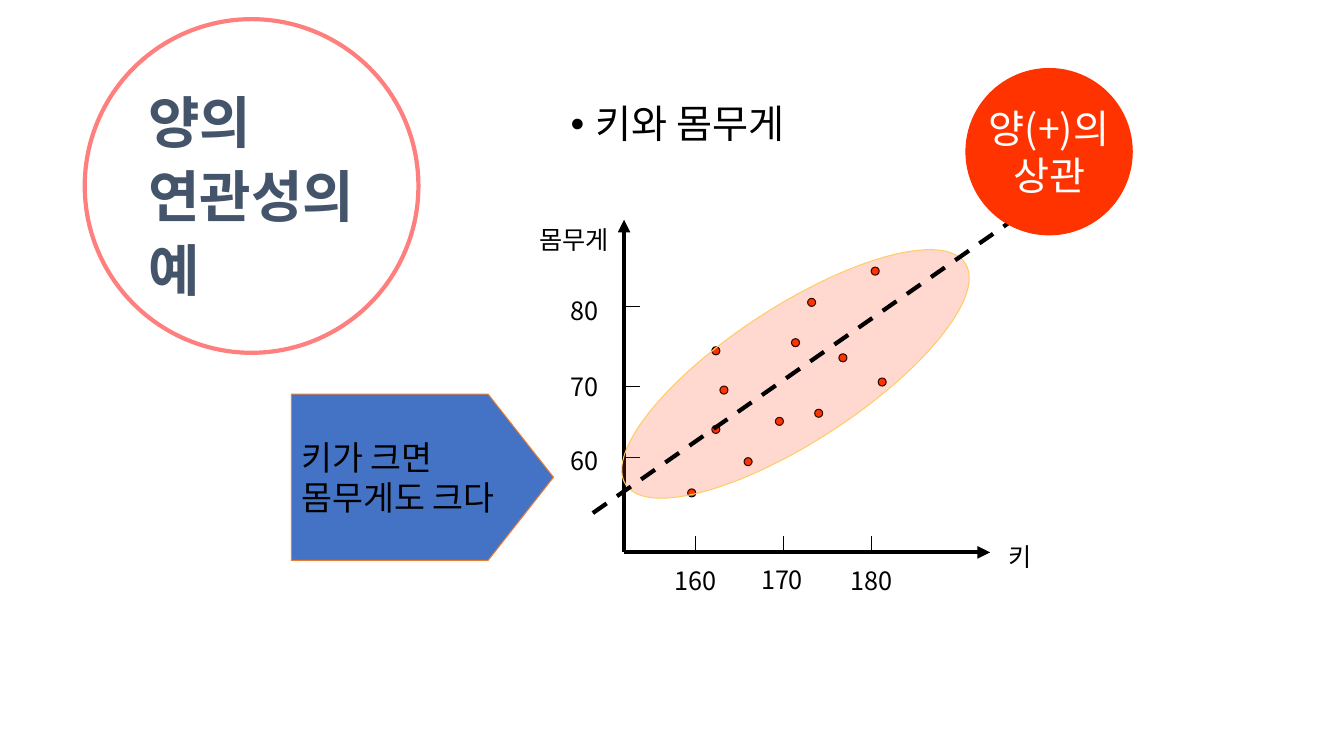
from pptx import Presentation
from pptx.dml.color import RGBColor
from pptx.enum.dml import MSO_LINE
from pptx.enum.shapes import MSO_CONNECTOR, MSO_SHAPE as Form
from pptx.enum.text import MSO_ANCHOR as Anchor, MSO_AUTO_SIZE as Fit, PP_ALIGN as Align
from pptx.util import Pt
from lxml.etree import SubElement
from pptx.oxml.ns import qn

PX = 9144  # 100 px to the inch
BLACK = RGBColor(0x00, 0x00, 0x00)
WHITE = RGBColor(0xFF, 0xFF, 0xFF)
RED = RGBColor(0xFF, 0x00, 0x00)
CORAL = RGBColor(0xFF, 0x33, 0x00)
GOLD = RGBColor(0xFF, 0xCC, 0x66)
BLUE = RGBColor(0x44, 0x72, 0xC4)
ORANGE = RGBColor(0xED, 0x7D, 0x31)
SLATE = RGBColor(0x44, 0x54, 0x6A)
NOTO = "Noto Sans CJK KR"

deck = Presentation()
deck.slide_width, deck.slide_height = 1333 * PX, 750 * PX
slide = deck.slides.add_slide(deck.slide_layouts[1])
shapes = slide.shapes


def draw(form, box, fill, edge, width=0.75):
    item = shapes.add_shape(form, *[n * PX for n in box])
    item.shadow.inherit = False
    if fill is None:
        item.fill.background()
    else:
        item.fill.solid()
        item.fill.fore_color.rgb = fill
    item.line.color.rgb = edge
    item.line.width = Pt(width)
    return item


def rule(x1, y1, x2, y2, width=0.75):
    item = shapes.add_connector(MSO_CONNECTOR.STRAIGHT, x1 * PX, y1 * PX, x2 * PX, y2 * PX)
    item.line.color.rgb = BLACK
    item.line.width = Pt(width)
    SubElement(item._element.spPr, qn("a:effectLst"))
    return item


# Title ring, half clear
ring = draw(Form.OVAL, (84, 19, 331, 331), None, RED, 3)
tint = ring.line._ln.find(".//" + qn("a:srgbClr"))
SubElement(tint, qn("a:alpha"), val="50000")

# Axes with arrowheads
LEFT, BASE = 619, 548
for end in ((LEFT, 218), (982, BASE)):
    axis = rule(LEFT, BASE, *end, 3)
    SubElement(axis.line._ln, qn("a:tailEnd"), type="triangle")

# Ticks and their labels
labels = [("키", 990, 532, 45), ("몸무게", 525, 218, 96)]
for x, text, left, top in ((690, "160", 659, 556), (777, "170", 745, 555), (864, "180", 834, 556)):
    rule(x, BASE, x, BASE - 16)
    labels.append((text, left, top, 66))
for y, text, top in ((454, "60", 437), (383, "70", 363), (304, "80", 288)):
    rule(LEFT, y, LEFT + 16, y)
    labels.append((text, 556, top, 50))

texts = []  # frame, words, size, colour, font
for text, left, top, width in labels:
    frame = shapes.add_textbox(left * PX, top * PX, width * PX, 40 * PX).text_frame
    frame.word_wrap = False
    frame.auto_size = Fit.SHAPE_TO_FIT_TEXT
    texts.append((frame, text, 18, BLACK, NOTO))

# Data points
for x, y in ((769, 414), (864, 265), (785, 336), (832, 351), (808, 406), (706, 422),
             (682, 485), (714, 383), (738, 454), (801, 296), (871, 375), (706, 344)):
    draw(Form.OVAL, (x, y, 8, 8), CORAL, BLACK)

# Tilted cloud and trend line
cloud = draw(Form.OVAL, (588, 304, 402, 134), CORAL, GOLD)
cloud.rotation = 326.9
tint = cloud._element.spPr.find(qn("a:solidFill")).find(qn("a:srgbClr"))
SubElement(tint, qn("a:alpha"), val="19000")
trend = rule(588, 509, 1005, 218, 3)
trend.line.dash_style = MSO_LINE.DASH

# Callout and badge
note = draw(Form.PENTAGON, (289, 391, 260, 165), BLUE, ORANGE)
note.adjustments[0] = 0.393
badge = draw(Form.OVAL, (958, 68, 165, 165), CORAL, CORAL)
for item in (note, badge):
    item.text_frame.word_wrap = False
    item.text_frame.vertical_anchor = Anchor.MIDDLE

# Title and list
title, body = shapes.title, slide.placeholders[1]
for item, box in ((title, (137, 77, 253, 227)), (body, (556, 99, 552, 95))):
    item.left, item.top, item.width, item.height = [n * PX for n in box]
    item.text_frame.word_wrap = True
    item.text_frame.auto_size = Fit.NONE
title.text_frame.vertical_anchor = Anchor.MIDDLE

# Words and fonts
texts += [
    (note.text_frame, "키가 크면\n몸무게도 크다", 24, BLACK, NOTO),
    (badge.text_frame, "양(+)의\n상관", 28, WHITE, NOTO),
    (title.text_frame, "양의\n연관성의 \v예", 40, SLATE, NOTO),
    (body.text_frame, "키와 몸무게", 28, BLACK, "Calibri"),
]
for frame, text, size, color, face in texts:
    frame.text = text
    for para in frame.paragraphs:
        para.alignment = Align.LEFT
        para.font.size = Pt(size)
        para.font.color.rgb = color
        para.font.name = face
        SubElement(para.font._element, qn("a:ea"), typeface=NOTO)

# Paragraph looks
for para in badge.text_frame.paragraphs:
    para.alignment = Align.CENTER
for para in title.text_frame.paragraphs:
    para.line_spacing = 1.1
    para.font.bold = True
point = body.text_frame.paragraphs[0]
point.line_spacing = 0.9
point.space_before = Pt(10)
props = point._p.get_or_add_pPr()
props.set("marL", str(25 * PX))
props.set("indent", str(-25 * PX))

deck.save("out.pptx")
